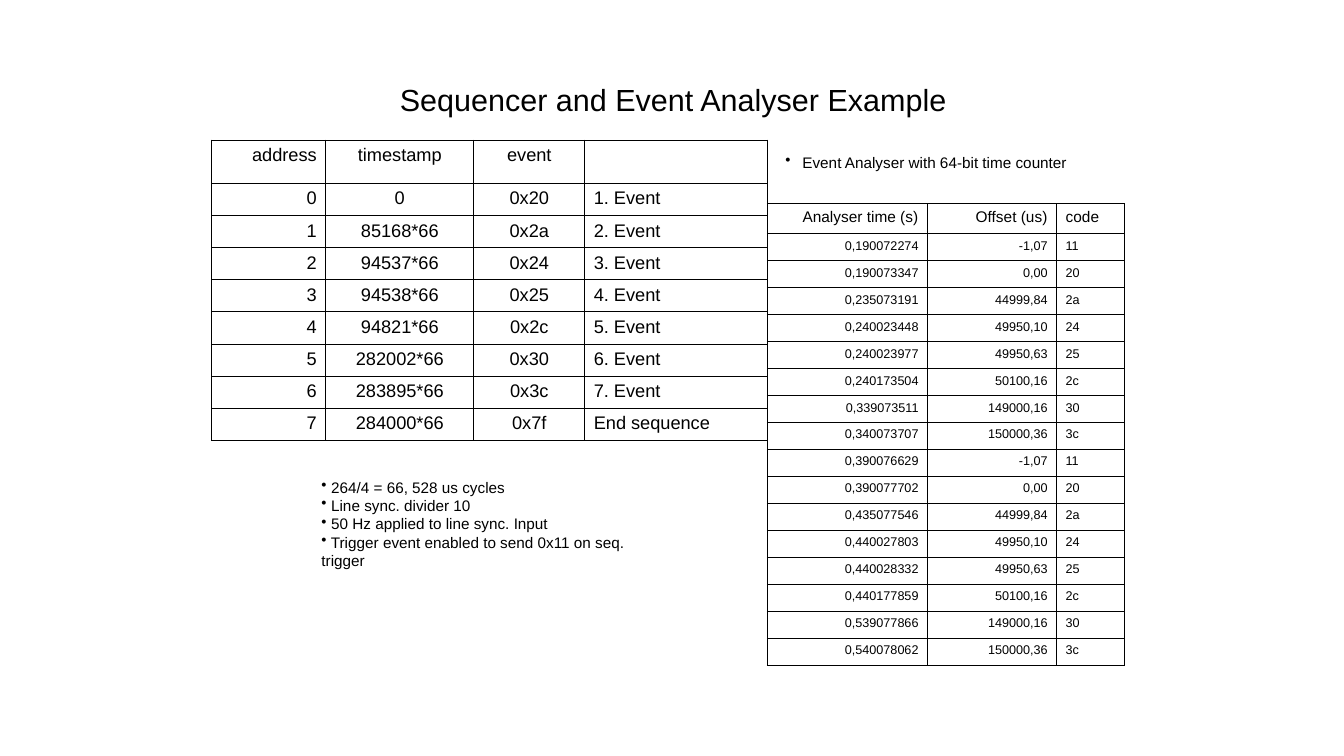
from itertools import cycle

from lxml import etree
from pptx import Presentation
from pptx import util as u
from pptx.dml.color import RGBColor
from pptx.enum import text
from pptx.oxml.ns import qn

BLACK = RGBColor(0, 0, 0)
WHITE = RGBColor(255, 255, 255)
LEFT, MID, RIGHT = text.PP_ALIGN.LEFT, text.PP_ALIGN.CENTER, text.PP_ALIGN.RIGHT

STAMPS = ["0", "85168*66", "94537*66", "94538*66", "94821*66",
          "282002*66", "283895*66", "284000*66"]
EVENTS = ["0x20", "0x2a", "0x24", "0x25", "0x2c", "0x30", "0x3c", "0x7f"]
TIMES = ["0,190072274", "0,190073347", "0,235073191", "0,240023448",
         "0,240023977", "0,240173504", "0,339073511", "0,340073707",
         "0,390076629", "0,390077702", "0,435077546", "0,440027803",
         "0,440028332", "0,440177859", "0,539077866", "0,540078062"]
OFFSETS = ["-1,07", "0,00", "44999,84", "49950,10", "49950,63",
           "50100,16", "149000,16", "150000,36"]
CODES = ["11", "20", "2a", "24", "25", "2c", "30", "3c"]
NOTES = [" 264/4 = 66, 528 us cycles", " Line sync. divider 10",
         " 50 Hz applied to line sync. Input",
         " Trigger event enabled to send 0x11 on seq. trigger"]


class Deck:
    """Draw styled elements on one slide, with 100 px to the inch."""

    font = "Arial"
    scale = 9144

    def __init__(self, wide, high):
        self.prs = Presentation()
        self.prs.slide_width, self.prs.slide_height = self.px(wide), self.px(high)
        self.slide = self.prs.slides.add_slide(self.prs.slide_layouts[6])

    def px(self, size):
        return u.Emu(round(size * self.scale))

    def label(self, para, words, size, align=LEFT):
        para.alignment = align
        run = para.add_run()
        run.text = words
        run.font.name = self.font
        run.font.size = u.Pt(size)
        run.font.color.rgb = BLACK

    def bullet(self, para, indent):
        props = para._p.get_or_add_pPr()
        props.set("marL", str(self.px(indent)))
        props.set("indent", str(self.px(-indent)))
        etree.SubElement(props, qn("a:buChar"), char="•")

    def box(self, place, lines, size, align=LEFT, indent=None, wrap=True,
            anchor=text.MSO_ANCHOR.TOP):
        frame = self.slide.shapes.add_textbox(*map(self.px, place)).text_frame
        frame.word_wrap = wrap
        frame.vertical_anchor = anchor
        for i, line in enumerate(lines):
            para = frame.add_paragraph() if i else frame.paragraphs[0]
            self.label(para, line, size, align)
            if indent is not None:
                self.bullet(para, indent)

    def border(self, cell):
        props = cell._tc.get_or_add_tcPr()
        for side in ("lnL", "lnR", "lnT", "lnB"):
            line = etree.SubElement(props, qn("a:" + side), w=str(u.Pt(0.75)))
            fill = etree.SubElement(line, qn("a:solidFill"))
            etree.SubElement(fill, qn("a:srgbClr"), val=str(BLACK))

    def table(self, left, top, high, head, cols, aligns, rows, sizes):
        shape = self.slide.shapes.add_table(
            len(rows), len(cols), *map(self.px, (left, top, sum(cols), high)))
        grid = shape.table
        grid.first_row = grid.horz_banding = False
        for col, wide in zip(grid.columns, cols):
            col.width = self.px(wide)
        step = (high - head) / (len(rows) - 1)
        for r, row in enumerate(rows):
            grid.rows[r].height = self.px(step if r else head)
            for c, words in enumerate(row):
                cell = grid.cell(r, c)
                cell.margin_left = cell.margin_right = self.px(9)
                cell.margin_top = cell.margin_bottom = self.px(5)
                self.border(cell)
                cell.fill.solid()
                cell.fill.fore_color.rgb = WHITE
                if words:
                    self.label(cell.text_frame.paragraphs[0], words,
                               sizes[min(r, 1)], aligns[c])


def main():
    deck = Deck(1333, 750)
    deck.box((218, 36, 900, 125), ["Sequencer and Event Analyser Example"],
             21.8, MID, anchor=text.MSO_ANCHOR.MIDDLE)

    steps = [("address", "timestamp", "event", "")]
    for i, (stamp, event) in enumerate(zip(STAMPS, EVENTS)):
        note = f"{i + 1}. Event" if i < len(STAMPS) - 1 else "End sequence"
        steps.append((str(i), stamp, event, note))
    deck.table(210, 139, 298, 43, (113, 147, 110, 181),
               (RIGHT, MID, MID, LEFT), steps, (13, 13))

    log = [("Analyser time (s)", "Offset (us)", "code")]
    log += zip(TIMES, cycle(OFFSETS), cycle(CODES))
    deck.table(761, 202, 458, 30, (159, 128, 67),
               (RIGHT, RIGHT, LEFT), log, (11, 9))

    deck.box((309, 469, 365, 82), NOTES, 10.9, indent=0, wrap=False)
    deck.box((769, 147, 323, 27), ["Event Analyser with 64-bit time counter"],
             10.9, indent=17)
    deck.prs.save("out.pptx")


if __name__ == "__main__":
    main()
